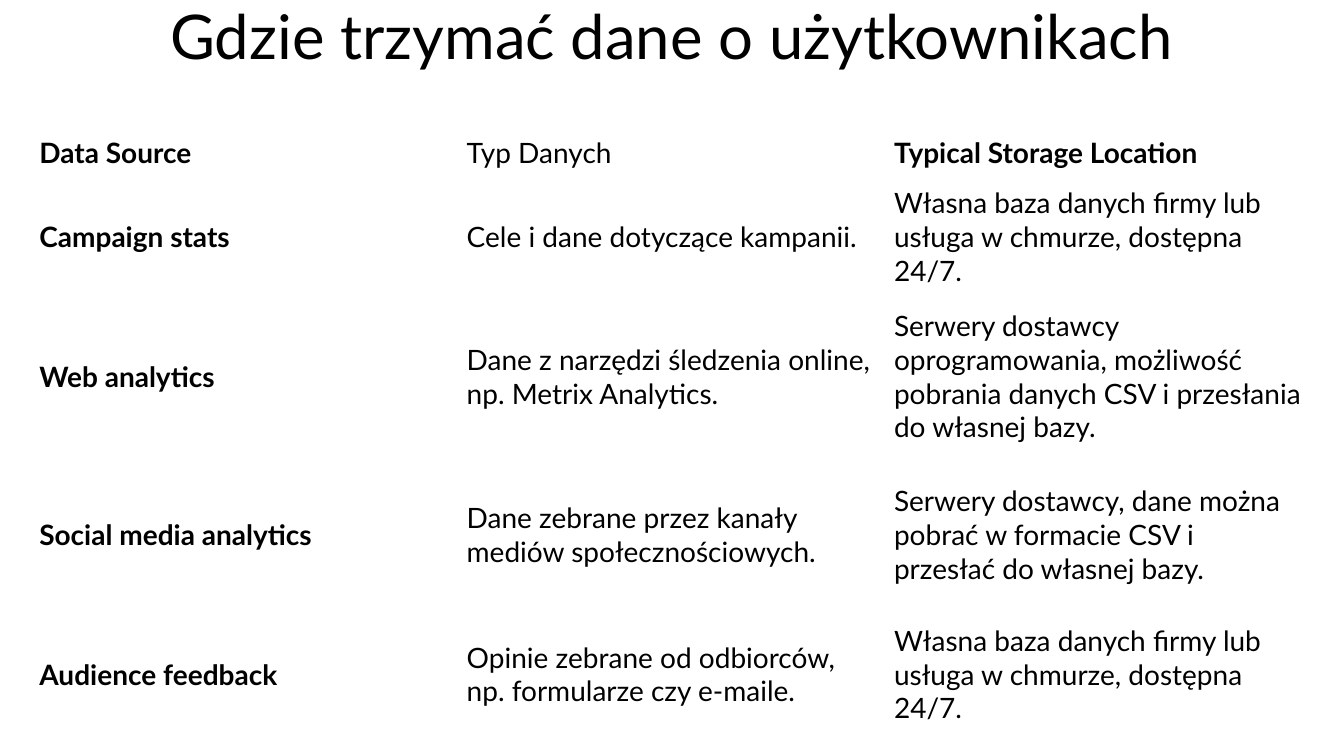
"""Build a slide with a table of where user data is stored."""
from dataclasses import dataclass
from typing import Any

import pptx
import pptx.dml.color
import pptx.enum.text
import pptx.util

Pt = pptx.util.Pt
ANCHOR = pptx.enum.text.MSO_ANCHOR
ALIGN = pptx.enum.text.PP_ALIGN


@dataclass(frozen=True)
class Theme:
    font: str = "Lato"
    ink: str = "000000"
    paper: str = "FFFFFF"
    title_size: float = 44
    body_size: float = 20


@dataclass(frozen=True)
class Row:
    height: float
    source: str
    data_type: str
    storage: str
    storage_bold: bool = False


THEME = Theme()
COLUMN_WIDTH = 305.28
OWN_DATABASE = "Własna baza danych firmy lub usługa w chmurze, dostępna 24/7."
ROWS = [
    Row(33.84, "Data Source", "Typ Danych", "Typical Storage Location", True),
    Row(86.4, "Campaign stats", "Cele i dane dotyczące kampanii.", OWN_DATABASE),
    Row(113.04, "Web analytics",
        "Dane z narzędzi śledzenia online, np. Metrix Analytics.",
        "Serwery dostawcy oprogramowania, możliwość pobrania danych CSV "
        "i przesłania do własnej bazy."),
    Row(113.04, "Social media analytics",
        "Dane zebrane przez kanały mediów społecznościowych.",
        "Serwery dostawcy, dane można pobrać w formacie CSV "
        "i przesłać do własnej bazy."),
    Row(86.4, "Audience feedback",
        "Opinie zebrane od odbiorców, np. formularze czy e-maile.", OWN_DATABASE),
]


def write(tf: Any, text: str, *, size: float = THEME.body_size, bold: bool = False,
          align: Any = ALIGN.LEFT, spacing: float = 1.0) -> None:
    tf.word_wrap = True
    p = tf.paragraphs[0]
    p.alignment = align
    p.line_spacing = spacing
    r = p.add_run()
    r.text = text
    r.font.name = THEME.font
    r.font.size = Pt(size)
    r.font.bold = bold
    r.font.color.rgb = pptx.dml.color.RGBColor.from_string(THEME.ink)


def add_title(s: Any, text: str) -> None:
    sp = s.shapes.add_textbox(Pt(66), Pt(0), Pt(828), Pt(56.88))
    sp.text_frame.vertical_anchor = ANCHOR.MIDDLE
    write(sp.text_frame, text, size=THEME.title_size, align=ALIGN.CENTER, spacing=0.9)


def add_storage_table(s: Any, rows: list[Row]) -> None:
    height = sum(row.height for row in rows)
    table = s.shapes.add_table(len(rows), 3, Pt(20.88), Pt(92.16),
                               Pt(3 * COLUMN_WIDTH), Pt(height)).table
    table.first_row = False
    table.horz_banding = False
    for column in table.columns:
        column.width = Pt(COLUMN_WIDTH)
    for i, row in enumerate(rows):
        table.rows[i].height = Pt(row.height)
        texts = [(row.source, True), (row.data_type, False),
                 (row.storage, row.storage_bold)]
        for j, (text, bold) in enumerate(texts):
            cell = table.cell(i, j)
            cell.fill.background()
            cell.vertical_anchor = ANCHOR.MIDDLE
            write(cell.text_frame, text, bold=bold)


def main() -> None:
    prs = pptx.Presentation()
    prs.slide_width, prs.slide_height = Pt(960), Pt(540)
    s = prs.slides.add_slide(prs.slide_layouts[6])
    s.background.fill.solid()
    s.background.fill.fore_color.rgb = pptx.dml.color.RGBColor.from_string(THEME.paper)
    add_title(s, "Gdzie trzymać dane o użytkownikach")
    add_storage_table(s, ROWS)
    prs.save("out.pptx")


if __name__ == "__main__":
    main()
